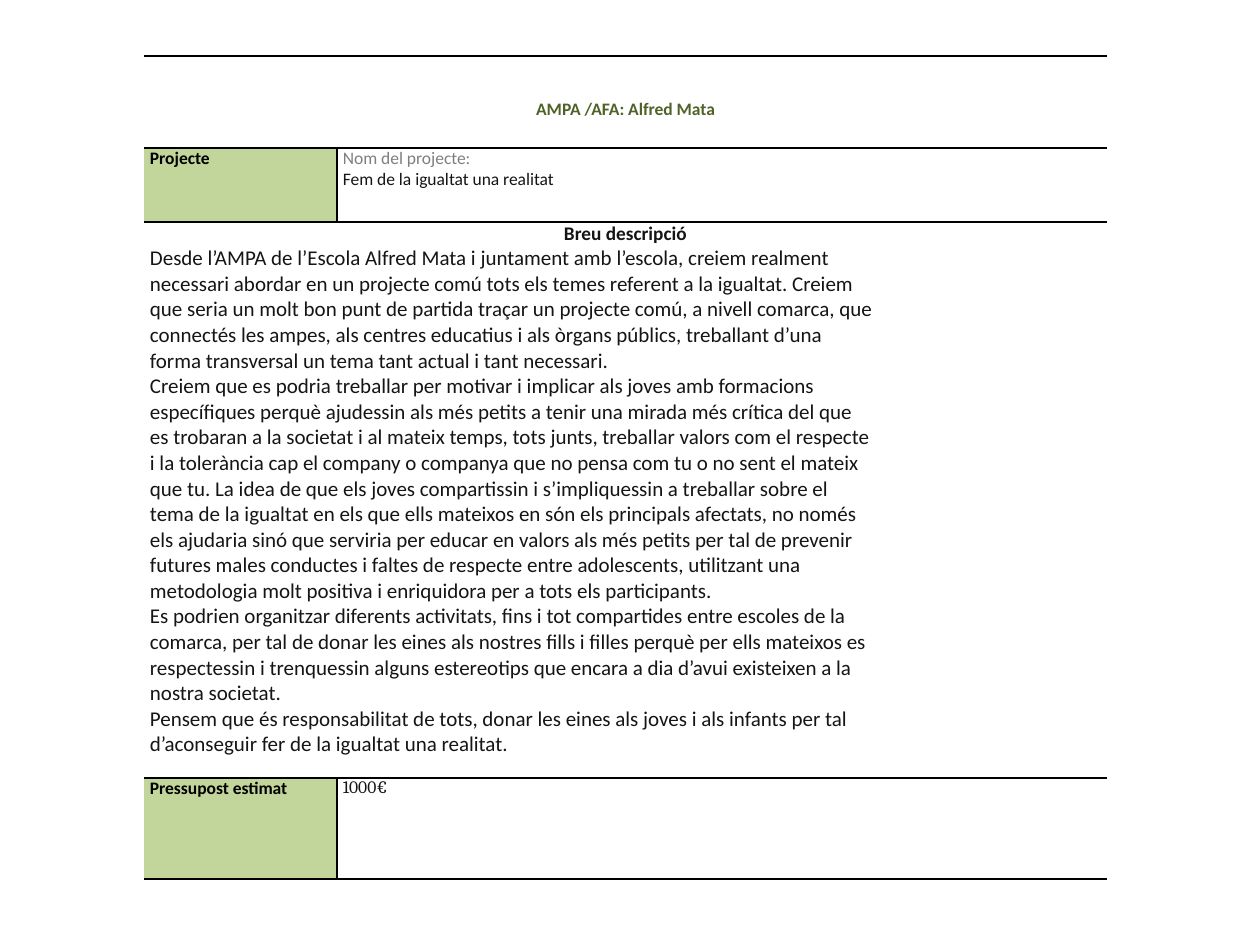
"""Build a one-slide project sheet for a school families' association."""
import pptx
import pptx.dml.color
import pptx.enum.text
import pptx.oxml.ns
import pptx.util
import lxml.etree

EMU_PER_PX = 914400 / 126
NO_STYLE = "{2D5ABB26-0587-4C30-8999-92F81FD0307C}"
INK = "151516"
LABEL_FILL = "C2D69B"
CENTER = pptx.enum.text.PP_ALIGN.CENTER

DESCRIPTION = (
    "Desde l’AMPA de l’Escola Alfred Mata i juntament amb l’escola, creiem realment",
    "necessari abordar en un projecte comú tots els temes referent a la igualtat. Creiem",
    "que seria un molt bon punt de partida traçar un projecte comú, a nivell comarca, que",
    "connectés les ampes, als centres educatius i als òrgans públics, treballant d’una",
    "forma transversal un tema tant actual i tant necessari.",
    "Creiem que es podria treballar per motivar i implicar als joves amb formacions",
    "específiques perquè ajudessin als més petits a tenir una mirada més crítica del que",
    "es trobaran a la societat i al mateix temps, tots junts, treballar valors com el respecte",
    "i la tolerància cap el company o companya que no pensa com tu o no sent el mateix",
    "que tu. La idea de que els joves compartissin i s’impliquessin a treballar sobre el",
    "tema de la igualtat en els que ells mateixos en són els principals afectats, no només",
    "els ajudaria sinó que serviria per educar en valors als més petits per tal de prevenir",
    "futures males conductes i faltes de respecte entre adolescents, utilitzant una",
    "metodologia molt positiva i enriquidora per a tots els participants.",
    "Es podrien organitzar diferents activitats, fins i tot compartides entre escoles de la",
    "comarca, per tal de donar les eines als nostres fills i filles perquè per ells mateixos es",
    "respectessin i trenquessin alguns estereotips que encara a dia d’avui existeixen a la",
    "nostra societat.",
    "Pensem que és responsabilitat de tots, donar les eines als joves i als infants per tal",
    "d’aconseguir fer de la igualtat una realitat.",
)


def px(length):
    """Turn pixels into EMU."""
    return pptx.util.Emu(round(length * EMU_PER_PX))


def rgb(value):
    """Turn a hex string into a colour."""
    return pptx.dml.color.RGBColor.from_string(value)


class Sheet:
    """Holds the style and the current slide."""

    def __init__(self, presentation, font="Calibri"):
        """Add a blank slide to the presentation."""
        self.font = font
        self.slide = presentation.slides.add_slide(presentation.slide_layouts[6])

    def table(self, left, top, widths, heights):
        """Add an unstyled table with the given column widths and row heights."""
        frame = self.slide.shapes.add_table(
            len(heights), len(widths), px(left), px(top), px(sum(widths)), px(sum(heights)))
        table = frame.table
        table.first_row = table.horz_banding = False
        for style_id in table._tbl.tblPr.iter(pptx.oxml.ns.qn("a:tableStyleId")):
            style_id.text = NO_STYLE
        for column, width in zip(table.columns, widths):
            column.width = px(width)
        for row, height in zip(table.rows, heights):
            row.height = px(height)
        return table

    def cell(self, cell, borders="", fill=None, margin_top=0):
        """Set a cell's margins, borders (any of L, R, T, B) and fill."""
        cell.margin_left = cell.margin_right = px(6)
        cell.margin_top, cell.margin_bottom = px(margin_top), 0
        properties = cell._tc.get_or_add_tcPr()
        for side in borders:
            line = lxml.etree.SubElement(properties, pptx.oxml.ns.qn(f"a:ln{side}"), w="12700")
            solid = lxml.etree.SubElement(line, pptx.oxml.ns.qn("a:solidFill"))
            lxml.etree.SubElement(solid, pptx.oxml.ns.qn("a:srgbClr"), val="000000")
        if fill:
            cell.fill.solid()
            cell.fill.fore_color.rgb = rgb(fill)
        else:
            cell.fill.background()

    def text(self, cell, wording, size=10, color=INK, bold=False, align=None, font=None):
        """Write one paragraph after any text already in the cell."""
        frame = cell.text_frame
        paragraph = frame.add_paragraph() if frame.text else frame.paragraphs[0]
        paragraph.text = wording
        paragraph.alignment = align
        paragraph.font.name = font or self.font
        paragraph.font.size = pptx.util.Pt(size)
        paragraph.font.bold = bold
        paragraph.font.color.rgb = rgb(color)


def main():
    """Build the sheet and save it."""
    presentation = pptx.Presentation()
    presentation.slide_width, presentation.slide_height = px(1260), px(945)
    sheet = Sheet(presentation)
    form = sheet.table(144, 56, widths=(193, 770), heights=(92, 74, 556, 101))

    for row in (0, 2):
        form.cell(row, 0).merge(form.cell(row, 1))
    association, description = form.cell(0, 0), form.cell(2, 0)
    for column in range(2):
        sheet.cell(form.cell(0, column), "TB", margin_top=43)
        sheet.cell(form.cell(2, column), "TB")
    sheet.text(association, "AMPA /AFA: Alfred Mata", color="4F6228", bold=True, align=CENTER)
    sheet.text(description, "Breu descripció", size=11, bold=True, align=CENTER)
    for line in DESCRIPTION:
        sheet.text(description, line, size=12)

    for row, label in ((1, "Projecte"), (3, "Pressupost estimat")):
        sheet.cell(form.cell(row, 0), "RTB", LABEL_FILL)
        sheet.text(form.cell(row, 0), label, color="000000", bold=True)
        sheet.cell(form.cell(row, 1), "LTB")
    project = form.cell(1, 1)
    sheet.text(project, "Nom del projecte:\vFem de la igualtat una realitat")
    project.text_frame.paragraphs[0].runs[0].font.color.rgb = rgb("7F7F7F")
    sheet.text(form.cell(3, 1), "1000€", font="Cambria")

    presentation.save("out.pptx")


if __name__ == "__main__":
    main()
